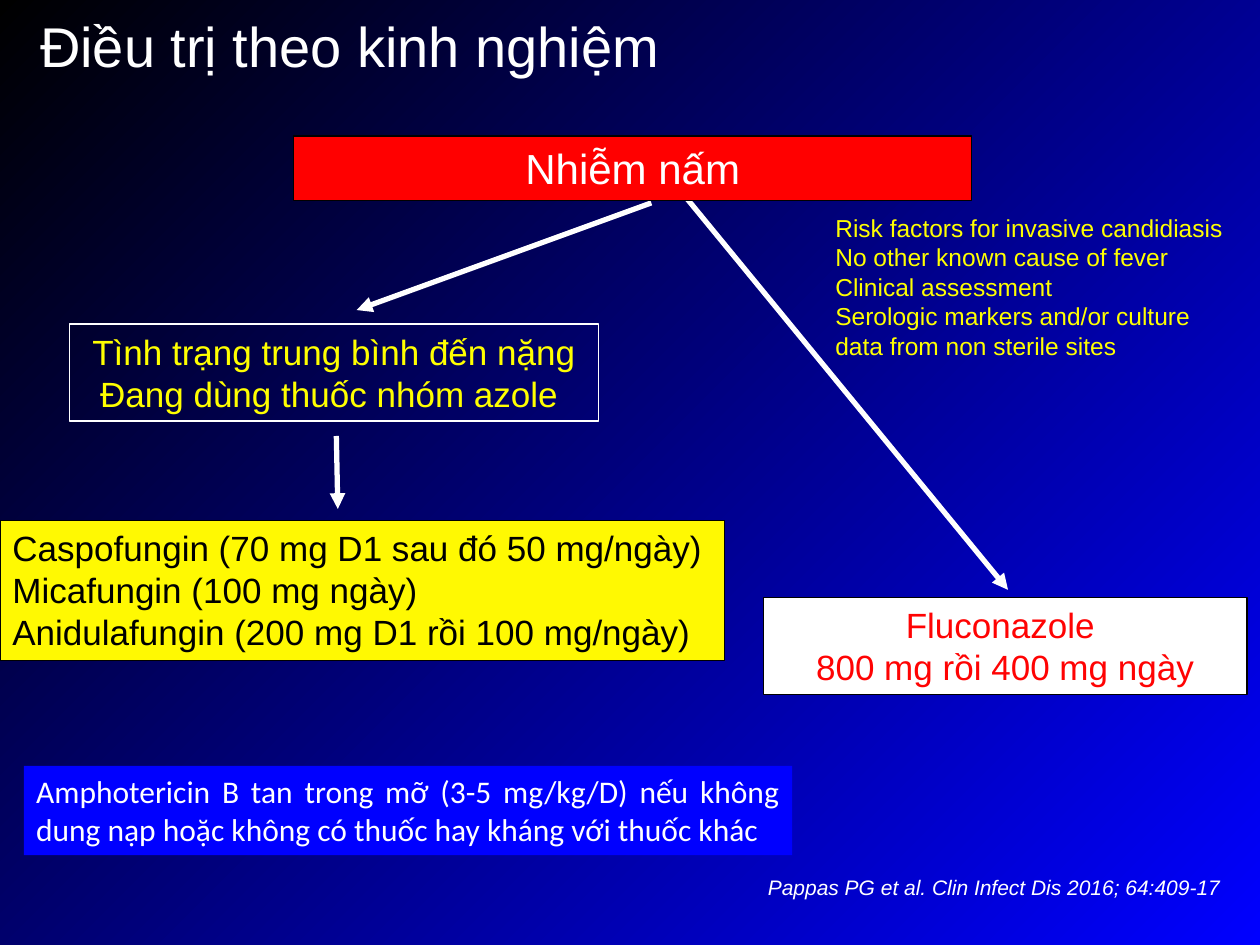
import pptx
import pptx.util
import pptx.dml.color
import pptx.enum.shapes
import pptx.enum.text
import pptx.oxml
import pptx.oxml.ns
import lxml.etree

Cm = pptx.util.Cm
Pt = pptx.util.Pt
RGBColor = pptx.dml.color.RGBColor
ALIGN = pptx.enum.text.PP_ALIGN
qn = pptx.oxml.ns.qn

BLACK = RGBColor(0x00, 0x00, 0x00)
WHITE = RGBColor(0xFF, 0xFF, 0xFF)
BLUE = RGBColor(0x00, 0x00, 0xFF)
RED = RGBColor(0xFF, 0x00, 0x00)
DOSE_RED = RGBColor(0xFF, 0x03, 0x03)
YELLOW = RGBColor(0xFF, 0xFF, 0x00)
DRUG_YELLOW = RGBColor(0xFF, 0xF9, 0x02)


def write(sp, lines, size, color, align=ALIGN.LEFT, font="Arial", italic=False, wrap=True):
    tf = sp.text_frame
    tf.word_wrap = wrap
    tf.vertical_anchor = pptx.enum.text.MSO_ANCHOR.TOP
    for i, line in enumerate(lines):
        p = tf.paragraphs[0] if i == 0 else tf.add_paragraph()
        p.alignment = align
        r = p.add_run()
        r.text = line
        r.font.name = font
        r.font.size = Pt(size)
        r.font.italic = italic
        r.font.color.rgb = color


def add_text(s, box, lines, size, color, **style):
    sp = s.shapes.add_textbox(*map(Cm, box))
    write(sp, lines, size, color, **style)


def add_box(s, box, lines, size, color, fill=None, line=None, **style):
    sp = s.shapes.add_shape(pptx.enum.shapes.MSO_SHAPE.RECTANGLE, *map(Cm, box))
    sp.shadow.inherit = False
    if fill is None:
        sp.fill.background()
    else:
        sp.fill.solid()
        sp.fill.fore_color.rgb = fill
    if line is None:
        sp.line.fill.background()
    else:
        sp.line.color.rgb = line
        sp.line.width = Pt(0.75)
    write(sp, lines, size, color, **style)


def add_arrow(s, x1, y1, x2, y2):
    c = s.shapes.add_connector(
        pptx.enum.shapes.MSO_CONNECTOR.STRAIGHT, Cm(x1), Cm(y1), Cm(x2), Cm(y2))
    c.line.color.rgb = WHITE
    c.line.width = Pt(3)
    ln = c.line._get_or_add_ln()
    lxml.etree.SubElement(ln, qn("a:tailEnd"), type="triangle")
    lxml.etree.SubElement(c._element.spPr, qn("a:effectLst"))


def paint_background(s):
    """Radial gradient, blue in the lower right corner."""
    fill = s.background.fill
    fill.gradient()
    for stop, color in zip(fill.gradient_stops, (BLUE, BLACK)):
        stop.color.rgb = color
    lin = next(s.element.iter(qn("a:lin")))
    radial = lxml.etree.Element(qn("a:path"), {"path": "circle"})
    lxml.etree.SubElement(radial, qn("a:fillToRect"), l="100000", t="100000")
    lin.getparent().replace(lin, radial)


def mild_branch(s, x, y, w, h):
    # Dose box with the arrow coming down to it
    add_box(s, (x, y, w, h), ["Fluconazole ", "800 mg rồi 400 mg ngày"], 20, DOSE_RED,
            fill=WHITE, line=BLACK, align=ALIGN.CENTER)
    add_arrow(s, x - 1.85, y - 8.41, x + 4.93, y - 0.15)


def severe_branch(s, x, y, w, h):
    # Condition, indented over the drugs
    add_box(s, (x + 1.4, y, 10.67, 1.96),
            ["Tình trạng trung bình đến nặng", "Đang dùng thuốc nhóm azole "],
            20, YELLOW, line=WHITE, align=ALIGN.CENTER)
    # Drugs, at the foot of the branch
    drugs_h = 2.82
    add_box(s, (x, y + h - drugs_h, w, drugs_h),
            ["Caspofungin (70 mg D1 sau đó 50 mg/ngày)",
             "Micafungin (100 mg ngày)",
             "Anidulafungin (200 mg D1 rồi 100 mg/ngày)"],
            20, BLACK, fill=DRUG_YELLOW, line=BLACK)
    # Arrows to the condition and on to the drugs
    add_arrow(s, x + 6.78, y + 2.26, x + 6.81, y + 3.73)
    add_arrow(s, x + 13.13, y - 2.44, x + 7.19, y - 0.28)


def infection(s, x, y, w, h):
    # Root of the tree, with the criteria below its right end
    add_box(s, (x, y, w, h), ["Nhiễm nấm"], 24, WHITE,
            fill=RED, line=BLACK, align=ALIGN.CENTER)
    add_text(s, (x + 10.67, y + 1.43, 8.69, 3.25),
             ["Risk factors for invasive candidiasis",
              "No other known cause of fever",
              "Clinical assessment",
              "Serologic markers and/or culture data from non sterile sites"],
             14, YELLOW)


def footer(s, x, y, w, h):
    # Alternative drug at the left, citation at the lower right
    add_box(s, (x, y, 15.49, 1.8),
            ["Amphotericin B tan trong mỡ (3-5 mg/kg/D) nếu không dung nạp "
             "hoặc không có thuốc hay kháng với thuốc khác"],
            18, WHITE, fill=BLUE, align=ALIGN.JUSTIFY, font="Calibri")
    cite_w, cite_h = 12.9, 0.76
    add_text(s, (x + w - cite_w, y + h - cite_h, cite_w, cite_h),
             ["Pappas PG et al. Clin Infect Dis 2016; 64:409-17"],
             12, WHITE, align=ALIGN.RIGHT, italic=True)


def main():
    prs = pptx.Presentation()
    prs.slide_width, prs.slide_height = Cm(25.4), Cm(19.05)
    s = prs.slides.add_slide(prs.slide_layouts[6])
    paint_background(s)
    add_text(s, (0.56, 0.1, 13.11, 1.63), ["Điều trị theo kinh nghiệm"], 32, WHITE, wrap=False)
    mild_branch(s, 15.39, 12.04, 9.75, 1.96)
    severe_branch(s, 0, 6.53, 14.6, 6.78)
    infection(s, 5.92, 2.74, 13.67, 1.3)
    footer(s, 0.48, 15.44, 24.38, 2.82)
    prs.save("out.pptx")


if __name__ == "__main__":
    main()
